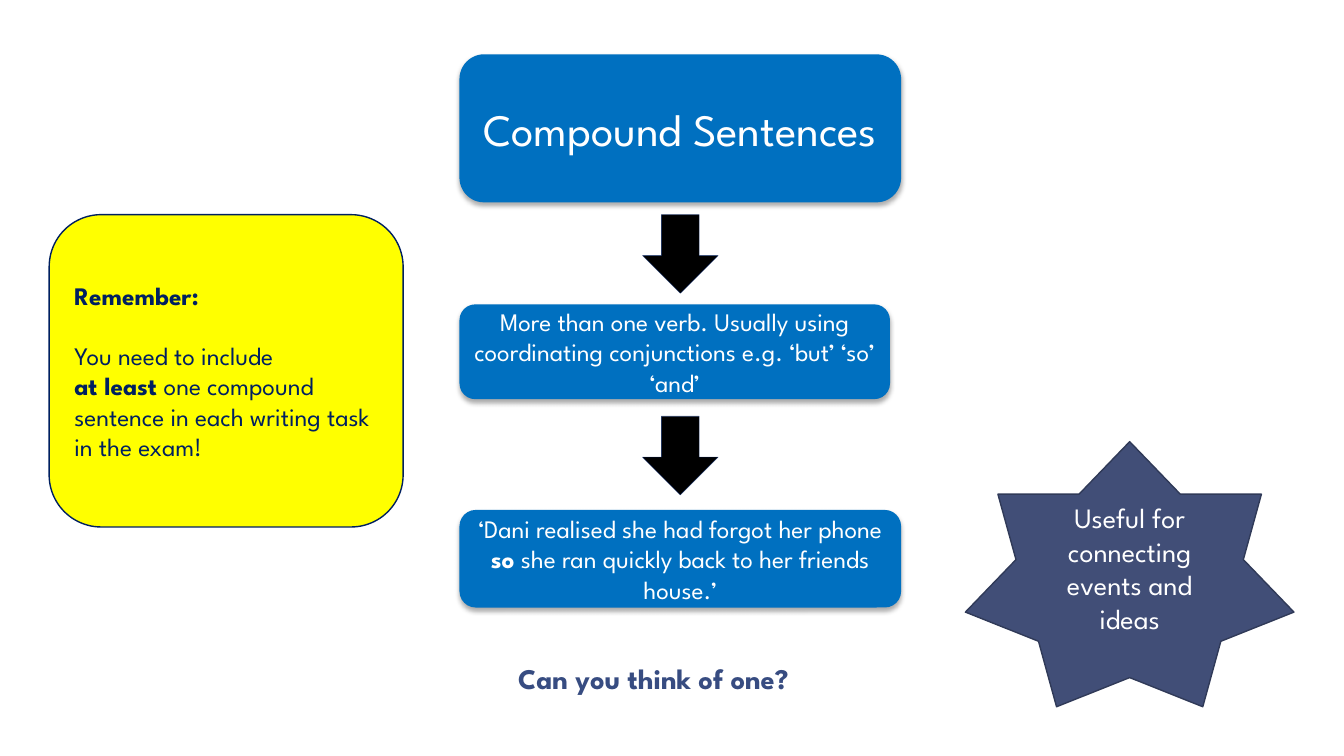
from lxml import etree
from pptx import Presentation
from pptx.dml.color import RGBColor
from pptx.enum import shapes, text
from pptx.oxml import ns
from pptx.util import Cm, Pt

FONT = "League Spartan"
WHITE = RGBColor(0xFF, 0xFF, 0xFF)
BLACK = RGBColor(0, 0, 0)
BLUE = RGBColor(0x00, 0x70, 0xC0)
NAVY = RGBColor(0x00, 0x20, 0x60)
YELLOW = RGBColor(0xFF, 0xFF, 0x00)
SLATE = RGBColor(0x41, 0x4E, 0x77)
DUSK = RGBColor(0x30, 0x3A, 0x58)
INDIGO = RGBColor(0x37, 0x4C, 0x81)

KIND = shapes.MSO_SHAPE
LEFT, MID = text.PP_ALIGN.LEFT, text.PP_ALIGN.CENTER


def write(shape, paras, size=18, color=WHITE, align=MID, gaps=(), line=None,
          anchor=text.MSO_ANCHOR.MIDDLE):
    """Fill a shape with paragraphs, each a list of (words, bold) runs.

    gaps maps a paragraph number to its space before, in points.
    """
    frame = shape.text_frame
    frame.word_wrap = True
    frame.vertical_anchor = anchor
    gaps = dict(gaps)
    for i, runs in enumerate(paras):
        para = frame.paragraphs[0] if i == 0 else frame.add_paragraph()
        para.alignment = align
        if line:
            para.line_spacing = line
        if i in gaps:
            para.space_before = Pt(gaps[i])
        for words, bold in runs:
            run = para.add_run()
            run.text = words
            font = run.font
            font.name, font.size, font.bold = FONT, Pt(size), bold
            font.color.rgb = color


def draw(slide, kind, box, fill, edge=None, width=1):
    shape = slide.shapes.add_shape(kind, *map(Cm, box))
    shape.shadow.inherit = False
    shape.fill.solid()
    shape.fill.fore_color.rgb = fill
    if edge is None:
        shape.line.fill.background()
    else:
        shape.line.color.rgb = edge
        shape.line.width = Pt(width)
    return shape


def fade(color, percent):
    """Set the opacity of a colour element."""
    etree.SubElement(color, ns.qn("a:alpha"), val=str(percent * 1000))


def shade(shape):
    """Add a soft shadow below the shape."""
    effects = shape._element.spPr.find(ns.qn("a:effectLst"))
    drop = etree.SubElement(
        effects, ns.qn("a:outerShdw"), blurRad=str(Pt(3.5)),
        dist=str(Pt(2.2)), dir="5400000", rotWithShape="0")
    fade(etree.SubElement(drop, ns.qn("a:srgbClr"), val="000000"), 32)


def flow(slide, left, top, width):
    """Draw the column of blue cards with an arrow between each pair."""
    cards = [
        (0, width, 3.73, 32, [("Compound Sentences", False)]),
        (6.3, 10.85, 2.39, 18, [
            ("More than one verb. Usually using coordinating conjunctions "
             "e.g. ‘but’ ‘so’ ‘and’", False)]),
        (11.48, width, 2.46, 18, [
            ("‘Dani realised she had forgot her phone ", False),
            ("so", True),
            (" she ran quickly back to her friends house.’", False)]),
    ]
    for down, wide, high, size, runs in cards:
        card = draw(slide, KIND.ROUNDED_RECTANGLE,
                    (left, top + down, wide, high), BLUE)
        shade(card)
        write(card, [runs], size=size)

    wide, high = 1.9, 1.98
    for down in (4.04, 9.12):
        box = (left + (width - wide) / 2, top + down, wide, high)
        arrow = draw(slide, KIND.DOWN_ARROW, box, BLACK, NAVY, 0.5)
        fade(arrow.line._ln.find(".//" + ns.qn("a:srgbClr")), 60)


def prompt(slide, *box):
    note = slide.shapes.add_textbox(*map(Cm, box))
    frame = note.text_frame
    frame.margin_left = frame.margin_right = Cm(0.33)
    frame.margin_top = frame.margin_bottom = Cm(0.18)
    write(note, [[("Can you think of one?", True)]], size=20.3, color=INDIGO,
          align=LEFT, line=0.95, anchor=text.MSO_ANCHOR.TOP)


def remind(slide, *box):
    card = draw(slide, KIND.ROUNDED_RECTANGLE, box, YELLOW, NAVY)
    write(card, [
        [("Remember:", True)],
        [("You need to include", False)],
        [("at least ", True),
         ("one compound sentence in each writing task in the exam!", False)],
    ], color=NAVY, align=LEFT, gaps={1: 21.5})


def star(slide, *box):
    shape = draw(slide, KIND.STAR_7_POINT, box, SLATE, DUSK)
    write(shape, [[("Useful for connecting events and ideas", False)]],
          size=20)


def main():
    deck = Presentation()
    deck.slide_width, deck.slide_height = Cm(33.87), Cm(19.05)
    slide = deck.slides.add_slide(deck.slide_layouts[6])
    flow(slide, 11.58, 1.37, 11.13)
    prompt(slide, 12.73, 16.54, 8.86, 1.57)
    remind(slide, 1.24, 5.41, 8.92, 7.87)
    star(slide, 24.33, 11.13, 8.28, 6.68)
    deck.save("out.pptx")


if __name__ == "__main__":
    main()
